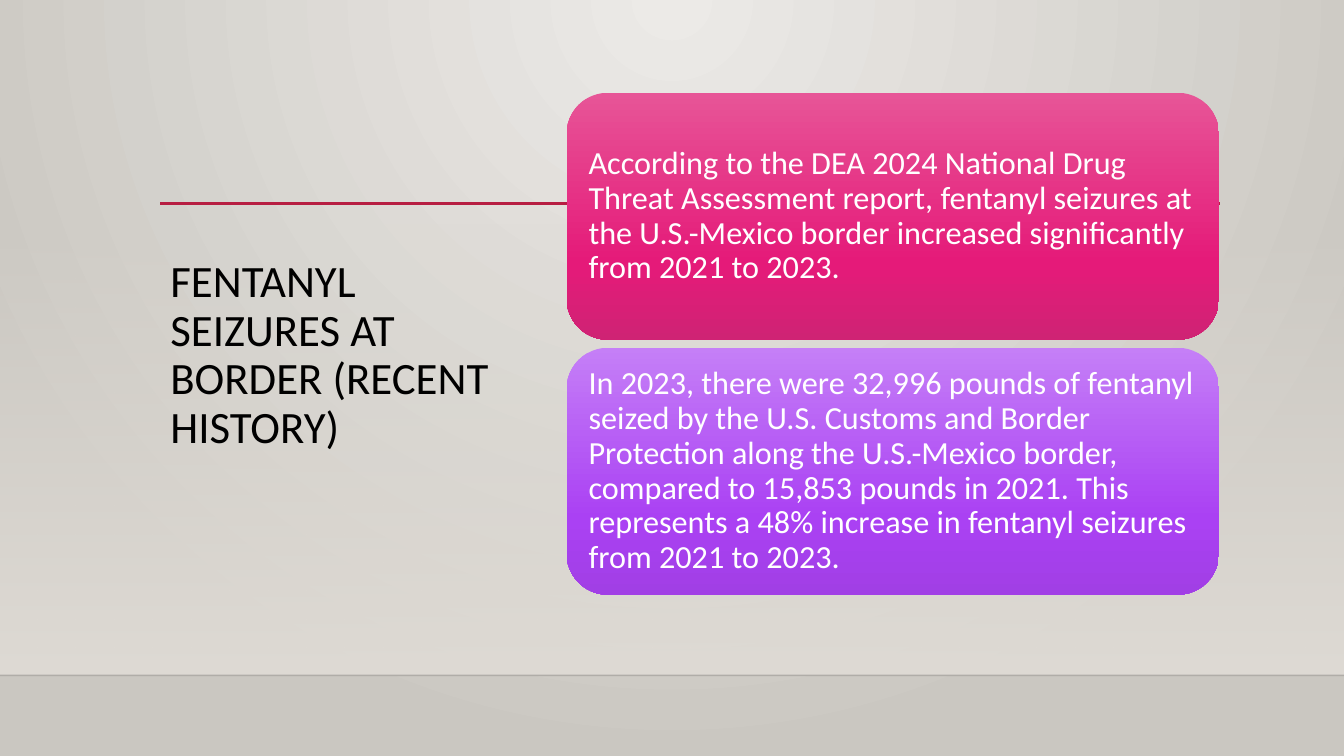
from lxml.etree import SubElement
from pptx import Presentation
from pptx.dml.color import RGBColor
from pptx.enum.shapes import MSO_CONNECTOR, MSO_SHAPE
from pptx.enum.text import MSO_ANCHOR, MSO_AUTO_SIZE, PP_ALIGN
from pptx.oxml.ns import qn
from pptx.util import Inches, Pt

FONT = "Calibri"
BLACK = RGBColor(0x00, 0x00, 0x00)
WHITE = RGBColor(0xFF, 0xFF, 0xFF)
RED = RGBColor(0xB7, 0x1E, 0x42)
SAND = RGBColor(0xDF, 0xDB, 0xD5)
BACK = [(0, RGBColor(0xEC, 0xEA, 0xE7)), (100, RGBColor(0xCA, 0xC7, 0xC1))]
PINK = [(0, RGBColor(0xE7, 0x55, 0x97)), (69, RGBColor(0xE5, 0x1A, 0x79)),
        (100, RGBColor(0xCF, 0x23, 0x74))]
PURPLE = [(0, RGBColor(0xC5, 0x7F, 0xF7)), (69, RGBColor(0xAA, 0x41, 0xF3)),
          (100, RGBColor(0xA1, 0x3F, 0xE5))]

TITLE = "FENTANYL SEIZURES AT BORDER (RECENT HISTORY)"
CARDS = [
    ("According to the DEA 2024 National Drug Threat Assessment report, "
     "fentanyl seizures at the U.S.-Mexico border increased significantly "
     "from 2021 to 2023.", PINK),
    ("In 2023, there were 32,996 pounds of fentanyl seized by the U.S. "
     "Customs and Border Protection along the U.S.-Mexico border, compared "
     "to 15,853 pounds in 2021. This represents a 48% increase in fentanyl "
     "seizures from 2021 to 2023.", PURPLE),
]


def set_alpha(node, share):
    """Set the opacity, in percent, of the first colour under node."""
    color = node.find(".//" + qn("a:srgbClr"))
    SubElement(color, qn("a:alpha"), val=str(share * 1000))


def blend(owner, fill, stops, radial=False):
    """Give fill, found under owner, a downward or radial gradient."""
    fill.gradient()
    grad = owner.element.find(".//" + qn("a:gradFill"))
    for child in list(grad):
        grad.remove(child)
    ramp = SubElement(grad, qn("a:gsLst"))
    for place, color in stops:
        stop = SubElement(ramp, qn("a:gs"), pos=str(place * 1000))
        SubElement(stop, qn("a:srgbClr"), val=str(color))
    if radial:
        way = SubElement(grad, qn("a:path"), path="circle")
        SubElement(way, qn("a:fillToRect"), l="43000", t="0",
                   r="43000", b="100000")
    else:
        SubElement(grad, qn("a:lin"), ang="5400000", scaled="0")
    return grad


def add_block(slide, kind, left, top, width, height, stops):
    shape = slide.shapes.add_shape(
        kind, Inches(left), Inches(top), Inches(width), Inches(height))
    shape.shadow.inherit = False
    shape.line.fill.background()
    blend(shape, shape.fill, stops)
    return shape


def add_rule(slide, left, right, top, color, weight):
    rule = slide.shapes.add_connector(
        MSO_CONNECTOR.STRAIGHT, Inches(left), Inches(top),
        Inches(right), Inches(top))
    rule.line.color.rgb = color
    rule.line.width = Pt(weight)
    SubElement(rule.element.spPr, qn("a:effectLst"))
    return rule


def set_text(frame, text, size, color, anchor):
    frame.text = text
    frame.word_wrap = True
    frame.auto_size = MSO_AUTO_SIZE.NONE
    frame.vertical_anchor = anchor
    para = frame.paragraphs[0]
    para.alignment = PP_ALIGN.LEFT
    para.line_spacing = 0.9
    font = para.runs[0].font
    font.name = FONT
    font.size = Pt(size)
    font.color.rgb = color


def add_title(slide):
    title = slide.shapes.title
    title.left, title.top = Inches(1.59), Inches(2.52)
    title.width, title.height = Inches(3.58), Inches(2.92)
    set_text(title.text_frame, TITLE, 32, BLACK, MSO_ANCHOR.TOP)
    slide.shapes.element.append(title.element)


def add_card(slide, top, text, stops):
    card = add_block(slide, MSO_SHAPE.ROUNDED_RECTANGLE,
                     5.62, top, 6.47, 2.45, stops)
    frame = card.text_frame
    frame.margin_left = frame.margin_right = Inches(0.1)
    frame.margin_top = frame.margin_bottom = Inches(0.1)
    set_text(frame, text, 23, WHITE, MSO_ANCHOR.MIDDLE)


def main():
    deck = Presentation()
    deck.slide_width, deck.slide_height = Inches(13.33), Inches(7.5)
    slide = deck.slides.add_slide(deck.slide_layouts[5])
    blend(slide, slide.background.fill, BACK, radial=True)

    wall = add_block(slide, MSO_SHAPE.RECTANGLE, 0, 2.21, 13.33, 4.49,
                     [(0, SAND), (100, SAND)])
    set_alpha(wall.element, 0)
    floor = add_rule(slide, 0, 13.33, 6.7, BLACK, 1)
    set_alpha(floor.element, 20)
    add_rule(slide, 1.59, 12.1, 2.02, RED, 2.5)

    add_title(slide)
    for row, (text, stops) in enumerate(CARDS):
        add_card(slide, 0.92 + row * 2.53, text, stops)
    deck.save("out.pptx")


if __name__ == "__main__":
    main()
